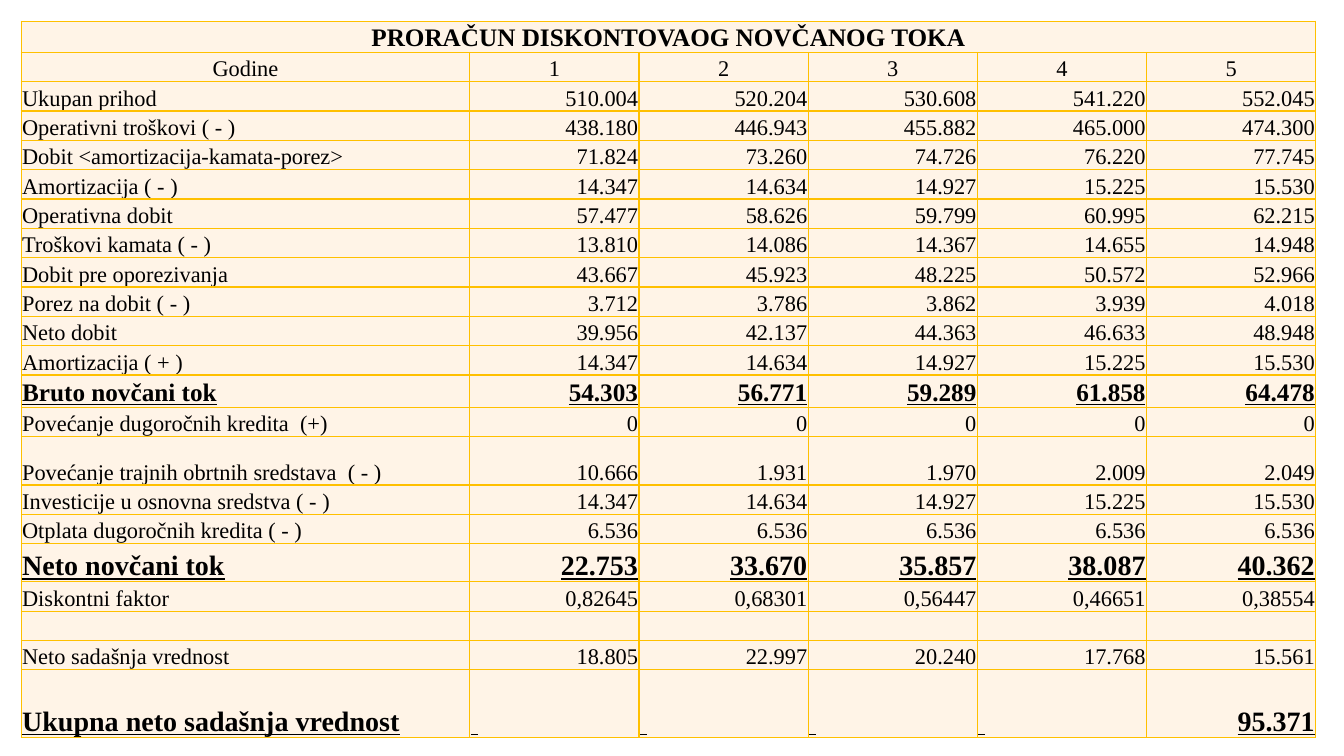
from lxml.etree import SubElement
from pptx import Presentation
from pptx.dml.color import RGBColor
from pptx.enum.text import MSO_ANCHOR, PP_ALIGN
from pptx.oxml.ns import qn
from pptx.util import Inches, Pt

TITLE = "PRORAČUN DISKONTOVAOG NOVČANOG TOKA"
HEADER = ("Godine", "1", "2", "3", "4", "5")
ROWS = [
    ("Ukupan prihod", "510.004", "520.204", "530.608", "541.220", "552.045"),
    ("Operativni troškovi ( - )", "438.180", "446.943", "455.882", "465.000", "474.300"),
    ("Dobit <amortizacija-kamata-porez>", "71.824", "73.260", "74.726", "76.220", "77.745"),
    ("Amortizacija ( - )", "14.347", "14.634", "14.927", "15.225", "15.530"),
    ("Operativna dobit", "57.477", "58.626", "59.799", "60.995", "62.215"),
    ("Troškovi kamata ( - )", "13.810", "14.086", "14.367", "14.655", "14.948"),
    ("Dobit pre oporezivanja", "43.667", "45.923", "48.225", "50.572", "52.966"),
    ("Porez na dobit ( - )", "3.712", "3.786", "3.862", "3.939", "4.018"),
    ("Neto dobit", "39.956", "42.137", "44.363", "46.633", "48.948"),
    ("Amortizacija ( + )", "14.347", "14.634", "14.927", "15.225", "15.530"),
    ("Bruto novčani tok", "54.303", "56.771", "59.289", "61.858", "64.478"),
    ("Povećanje dugoročnih kredita  (+)", "0", "0", "0", "0", "0"),
    ("Povećanje trajnih obrtnih sredstava  ( - )", "10.666", "1.931", "1.970", "2.009", "2.049"),
    ("Investicije u osnovna sredstva ( - )", "14.347", "14.634", "14.927", "15.225", "15.530"),
    ("Otplata dugoročnih kredita ( - )", "6.536", "6.536", "6.536", "6.536", "6.536"),
    ("Neto novčani tok", "22.753", "33.670", "35.857", "38.087", "40.362"),
    ("Diskontni faktor", "0,82645", "0,68301", "0,56447", "0,46651", "0,38554"),
    ("", "", "", "", "", ""),
    ("Neto sadašnja vrednost", "18.805", "22.997", "20.240", "17.768", "15.561"),
    ("Ukupna neto sadašnja vrednost", " ", " ", " ", " ", "95.371"),
]
GRID = [(TITLE, "", "", "", "", ""), HEADER, *ROWS]

COLORS = {"fill": "FFF4E7", "border": "FFC000", "text": "000000"}
FONT = "Times New Roman"
BODY_SIZE = 16
TOTAL_SIZES = {"Bruto novčani tok": 18, "Neto novčani tok": 20,
               "Ukupna neto sadašnja vrednost": 20}
SPECIAL_HEIGHTS = {
    TITLE: 0.31,
    "Bruto novčani tok": 0.32,
    "Povećanje trajnih obrtnih sredstava  ( - )": 0.48,
    "Neto novčani tok": 0.38,
    "Ukupna neto sadašnja vrednost": 0.67,
}
LEFT, TOP, WIDTH, HEIGHT = 0.21, 0.21, 12.84, 7.11
LABEL_WIDTH = 4.45
YEAR_WIDTH = (WIDTH - LABEL_WIDTH) / (len(HEADER) - 1)
ROW_HEIGHT = (HEIGHT - sum(SPECIAL_HEIGHTS.values())) / (len(GRID) - len(SPECIAL_HEIGHTS))


def add_borders(cell):
    properties = cell._tc.get_or_add_tcPr()
    for position, side in enumerate(("a:lnL", "a:lnR", "a:lnT", "a:lnB")):
        line = properties.makeelement(qn(side), {"w": str(Pt(1))})
        properties.insert(position, line)
        fill = SubElement(line, qn("a:solidFill"))
        SubElement(fill, qn("a:srgbClr"), val=COLORS["border"])


def alignment_for(row, column):
    if row < 2:
        return PP_ALIGN.CENTER
    if column == 0 or not GRID[row][column].strip():
        return PP_ALIGN.LEFT
    return PP_ALIGN.RIGHT


def format_cell(cell, row, column):
    label = GRID[row][0]
    cell.fill.solid()
    cell.fill.fore_color.rgb = RGBColor.from_string(COLORS["fill"])
    cell.vertical_anchor = MSO_ANCHOR.BOTTOM
    cell.margin_left = cell.margin_right = cell.margin_top = Inches(0.01)
    cell.margin_bottom = 0
    add_borders(cell)

    para = cell.text_frame.paragraphs[0]
    para.text = GRID[row][column]
    para.alignment = alignment_for(row, column)
    size = 18 if label == TITLE else TOTAL_SIZES.get(label, BODY_SIZE)
    if not para.runs:
        para.font.size = Pt(size)
        SubElement(para._p, qn("a:endParaRPr"), sz=str(size * 100))
    for span in para.runs:
        span.font.name = FONT
        span.font.size = Pt(size)
        span.font.bold = label == TITLE or label in TOTAL_SIZES
        span.font.underline = label in TOTAL_SIZES
        span.font.color.rgb = RGBColor.from_string(COLORS["text"])


def main():
    deck = Presentation()
    deck.slide_width, deck.slide_height = Inches(13.33), Inches(7.5)
    page = deck.slides.add_slide(deck.slide_layouts[6])
    table = page.shapes.add_table(len(GRID), len(HEADER), Inches(LEFT), Inches(TOP),
                                  Inches(WIDTH), Inches(HEIGHT)).table
    table.first_row = table.horz_banding = False
    for index, column in enumerate(table.columns):
        column.width = Inches(YEAR_WIDTH if index else LABEL_WIDTH)
    for row_index, row in enumerate(table.rows):
        row.height = Inches(SPECIAL_HEIGHTS.get(GRID[row_index][0], ROW_HEIGHT))
        for column_index, cell in enumerate(row.cells):
            format_cell(cell, row_index, column_index)
    table.cell(0, 0).merge(table.cell(0, len(HEADER) - 1))
    deck.save("out.pptx")


if __name__ == "__main__":
    main()
